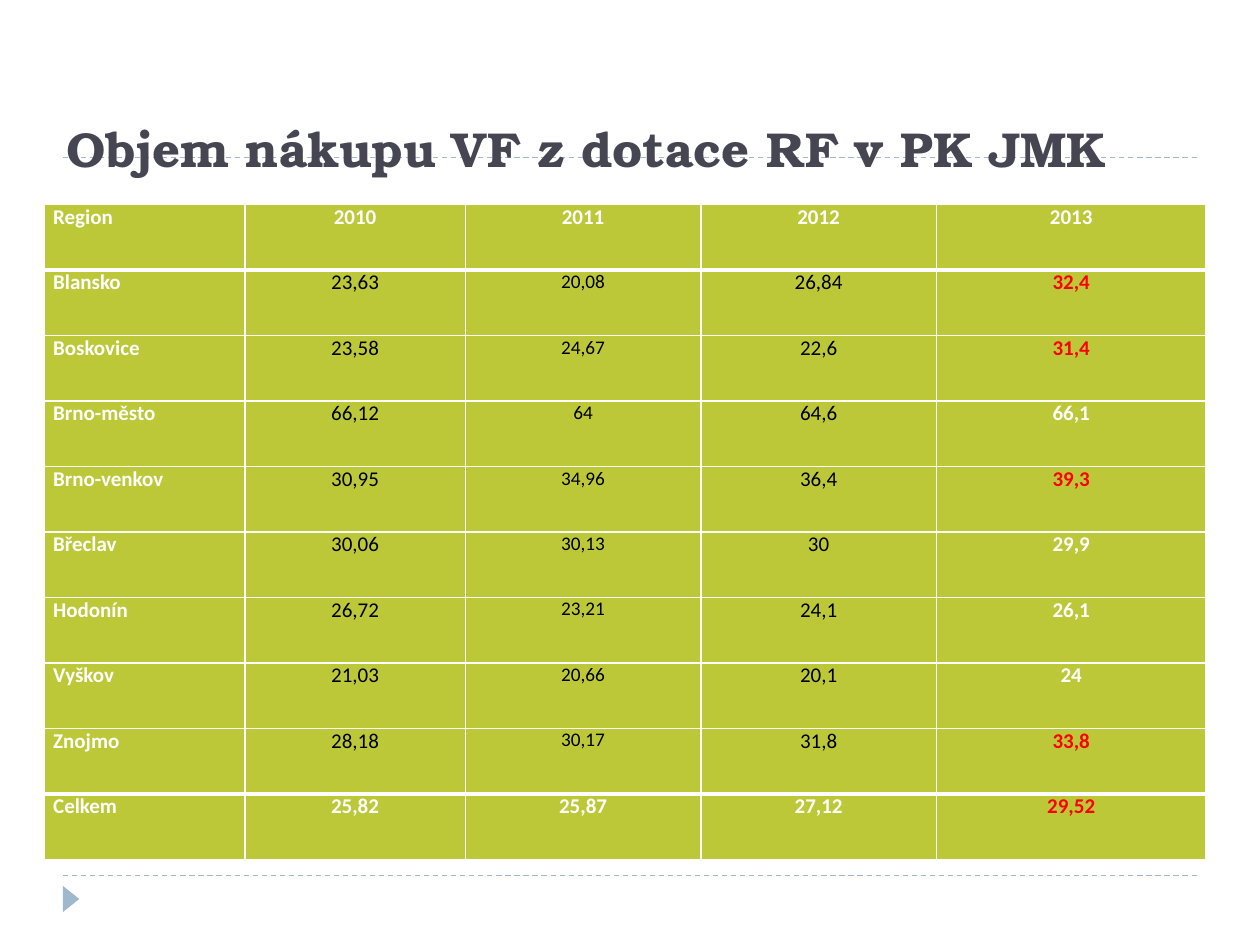
from lxml.etree import SubElement
from pptx import Presentation
from pptx.dml.color import RGBColor
from pptx.enum.dml import MSO_LINE_DASH_STYLE as DASH
from pptx.enum.shapes import MSO_CONNECTOR as CONN, MSO_SHAPE as SHAPE
from pptx.enum.text import MSO_ANCHOR as ANCHOR, PP_ALIGN as ALIGN
from pptx.oxml.ns import qn
from pptx.util import Pt

WHITE, BLACK, RED, LIME, BLUE, DARK = "FFFFFF", "000000", "FF0000", "BCC838", "9FB8CD", "464653"
COLUMN_WIDTHS = [114.5, 126, 134.6, 134.6, 154.1]
ROWS = [
    ["Region", "2010", "2011", "2012", "2013"],
    ["Blansko", "23,63", "20,08", "26,84", "32,4"],
    ["Boskovice", "23,58", "24,67", "22,6", "31,4"],
    ["Brno-město", "66,12", "64", "64,6", "66,1"],
    ["Brno-venkov", "30,95", "34,96", "36,4", "39,3"],
    ["Břeclav", "30,06", "30,13", "30", "29,9"],
    ["Hodonín", "26,72", "23,21", "24,1", "26,1"],
    ["Vyškov", "21,03", "20,66", "20,1", "24"],
    ["Znojmo", "28,18", "30,17", "31,8", "33,8"],
    ["Celkem", "25,82", "25,87", "27,12", "29,52"],
]
RED_REGIONS = {"Blansko", "Boskovice", "Brno-venkov", "Znojmo", "Celkem"}


def rgb(color):
    """Turn a hex string into a colour."""
    return RGBColor.from_string(color)


def set_font(p, name, size, color, bold):
    """Set the font of a whole paragraph."""
    p.font.name, p.font.size, p.font.bold = name, Pt(size), bold
    p.font.color.rgb = rgb(color)


def add_rule(s, x, y, width):
    """Draw a dashed horizontal rule."""
    rule = s.shapes.add_connector(CONN.STRAIGHT, Pt(x), Pt(y), Pt(x + width), Pt(y))
    rule.line.color.rgb = rgb(BLUE)
    rule.line.width = Pt(0.75)
    rule.line.dash_style = DASH.DASH
    SubElement(rule.element.spPr, qn("a:effectLst"))


def add_marker(s, x, y, width, height):
    """Draw the triangle that points right in the footer."""
    sp = s.shapes.add_shape(SHAPE.ISOSCELES_TRIANGLE, Pt(x), Pt(y), Pt(width), Pt(height))
    sp.rotation = 90
    sp.shadow.inherit = False
    sp.fill.solid()
    sp.fill.fore_color.rgb = rgb(BLUE)
    sp.line.fill.background()


def place_title(s, x, y, width, height):
    """Fill the title placeholder and bring it in front of the rules."""
    title = s.shapes.title
    title.left, title.top, title.width, title.height = Pt(x), Pt(y), Pt(width), Pt(height)
    tf = title.text_frame
    tf.text = "Objem nákupu VF z dotace RF v PK JMK"
    tf.word_wrap = True
    tf.vertical_anchor = ANCHOR.BOTTOM
    p = tf.paragraphs[0]
    p.alignment = ALIGN.LEFT
    set_font(p, "TeX Gyre Bonum", 28, DARK, True)
    s.shapes[-1].element.addnext(title.element)


def set_borders(cell, top, bottom):
    """Give a cell white borders with the given top and bottom widths."""
    tc_pr = cell._tc.get_or_add_tcPr()
    for side, width in (("L", 1), ("R", 1), ("T", top), ("B", bottom)):
        ln = SubElement(tc_pr, qn(f"a:ln{side}"), w=str(Pt(width)))
        SubElement(SubElement(ln, qn("a:solidFill")), qn("a:srgbClr"), val=WHITE)


def format_cell(cell, i, j):
    """Write and format the cell in row i and column j."""
    last = len(ROWS) - 1
    cell.text = ROWS[i][j]
    cell.margin_left = cell.margin_right = Pt(5)
    cell.margin_top = cell.margin_bottom = 0
    set_borders(cell, 3 if i in (1, last) else 1, 3 if i in (0, last - 1) else 1)
    cell.fill.solid()
    cell.fill.fore_color.rgb = rgb(LIME)
    bold = i in (0, last) or j in (0, 4)
    color = WHITE if bold else BLACK
    if j == 4 and ROWS[i][0] in RED_REGIONS:
        color = RED
    p = cell.text_frame.paragraphs[0]
    p.alignment = ALIGN.CENTER if j else ALIGN.LEFT
    set_font(p, "Calibri", 11 if j == 2 and not bold else 12, color, bold)


def add_region_table(s, x, y, width, height):
    """Add the table of purchases by region and year."""
    table = s.shapes.add_table(len(ROWS), len(COLUMN_WIDTHS), Pt(x), Pt(y), Pt(width), Pt(height)).table
    for column, column_width in zip(table.columns, COLUMN_WIDTHS):
        column.width = Pt(column_width)
    for i, row in enumerate(table.rows):
        row.height = Pt(height / len(ROWS))
        for j, cell in enumerate(row.cells):
            format_cell(cell, i, j)


def main():
    """Build the slide and save it."""
    prs = Presentation()
    prs.slide_width, prs.slide_height = Pt(720), Pt(540)
    s = prs.slides.add_slide(prs.slide_layouts[5])
    for y in (500.4, 90):
        add_rule(s, 36, y, 648)
    add_marker(s, 33.1, 509, 15, 9.4)
    place_title(s, 31, 15.1, 648, 90)
    add_region_table(s, 25.4, 116.9, sum(COLUMN_WIDTHS), 374.4)
    prs.save("out.pptx")


if __name__ == "__main__":
    main()
